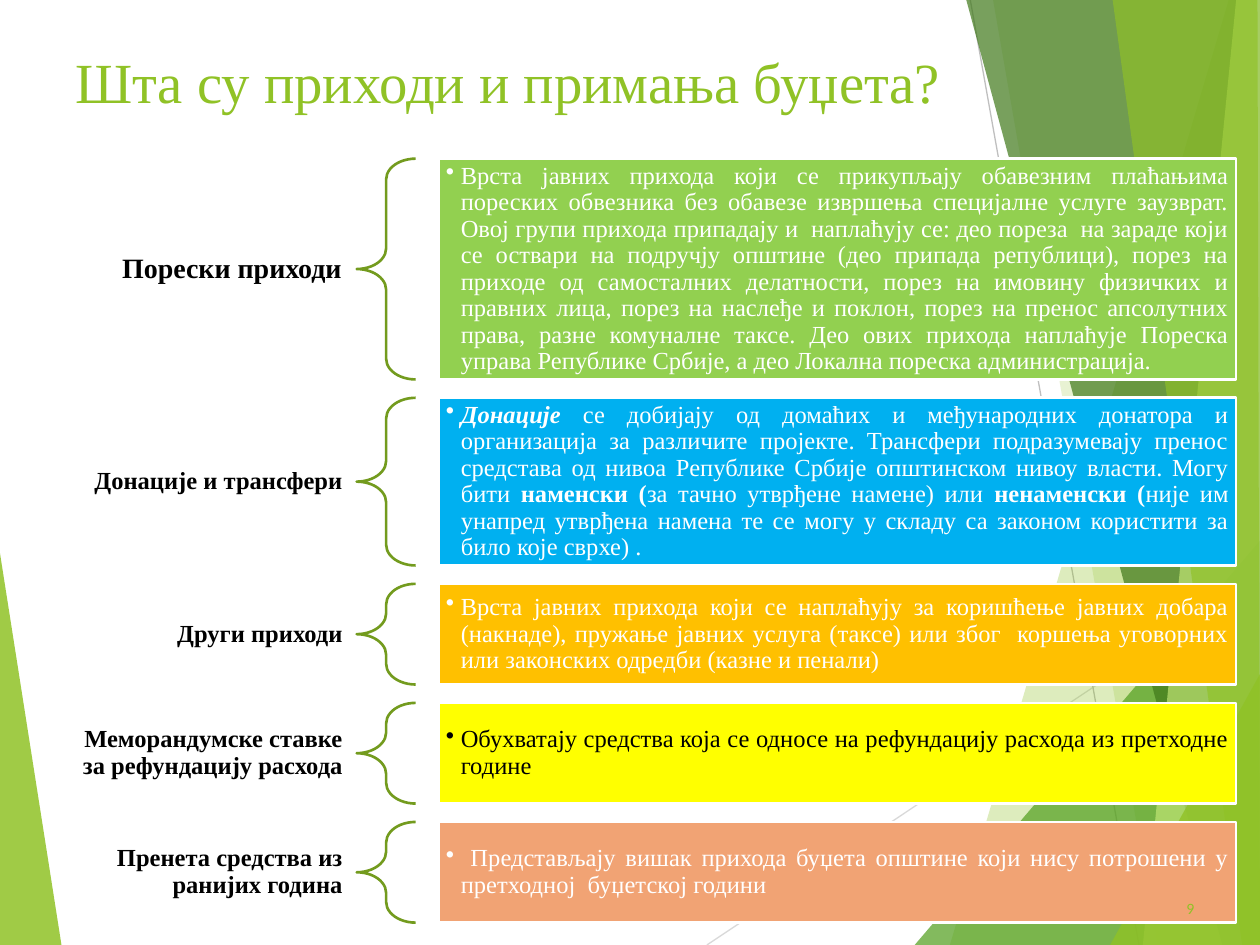
from pptx import Presentation
from pptx.dml.color import RGBColor
from pptx.enum.shapes import MSO_CONNECTOR, MSO_SHAPE
from pptx.enum.text import MSO_ANCHOR, MSO_AUTO_SIZE, PP_ALIGN
from pptx.oxml.ns import qn
from pptx.util import Cm, Pt
from lxml.etree import SubElement

WHITE = RGBColor(255, 255, 255)
BLACK = RGBColor(0, 0, 0)
LIME = RGBColor(0x90, 0xC2, 0x26)
GREEN = RGBColor(0x54, 0xA0, 0x21)
DARK = RGBColor(0x3F, 0x78, 0x19)
PALE = RGBColor(0xC0, 0xE4, 0x74)
OLIVE = RGBColor(0x73, 0x9B, 0x1E)
LEAF = RGBColor(0x92, 0xD0, 0x50)
BLUE = RGBColor(0x00, 0xB0, 0xF0)
GOLD = RGBColor(0xFF, 0xC0, 0x00)
YELLOW = RGBColor(0xFF, 0xFF, 0x00)
PEACH = RGBColor(0xF1, 0xA3, 0x74)
SILVER = RGBColor(0xD9, 0xD9, 0xD9)
GRAY = RGBColor(0xBF, 0xBF, 0xBF)
FONT = "Times New Roman"

TITLE = "Шта су приходи и примања буџета?"
ROWS = [
    ("Порески приходи", 16, 4.45, LEAF, WHITE, [
        ("Врста јавних прихода који се прикупљају обавезним плаћањима пореских "
         "обвезника без обавезе извршења специјалне услуге заузврат. Овој групи "
         "прихода припадају и  наплаћују се: део пореза  на зараде који се оствари "
         "на подручју општине (део припада републици), порез на приходе од "
         "самосталних делатности, порез на имовину физичких и правних лица, порез "
         "на наслеђе и поклон, порез на пренос апсолутних права, разне комуналне "
         "таксе. Део ових прихода наплаћује Пореска управа Републике Србије, а део "
         "Локална пореска администрација.", "")]),
    ("Донације и трансфери", 14, 3.38, BLUE, WHITE, [
        ("Донације ", "bi"),
        ("се добијају од домаћих и међународних донатора и организација за "
         "различите пројекте. Трансфери подразумевају пренос средстава од нивоа "
         "Републике Србије општинском нивоу власти. Могу бити ", ""),
        ("наменски (", "b"),
        ("за тачно утврђене намене) или ", ""),
        ("ненаменски (", "b"),
        ("није им унапред утврђена намена те се могу у складу са законом "
         "користити за било које сврхе) .", "")]),
    ("Други приходи", 14, 2.03, GOLD, WHITE, [
        ("Врста јавних прихода који се наплаћују за коришћење јавних добара "
         "(накнаде), пружање јавних услуга (таксе) или због  коршења уговорних "
         "или законских одредби (казне и пенали)", "")]),
    ("Меморандумске ставке за рефундацију расхода", 14, 2.03, YELLOW, BLACK, [
        ("Обухватају средства која се односе на рефундацију расхода из "
         "претходне године", "")]),
    ("Пренета средства из ранијих година", 14, 2.03, PEACH, WHITE, [
        (" Представљају вишак прихода буџета општине који нису потрошени у "
         "претходној  буџетској години", "")]),
]
RIGHT, BASE = 25.4, 19.05
LEFT = (LIME, 85, [(0, 11.15), (1.24, BASE), (0, BASE)])
LINES = [(14.25, BASE, RIGHT, 11.61, SILVER), (19.56, 0, 22.96, BASE, GRAY)]
FACETS = [
    (LIME, 30, [(24.77, 0), (19.15, BASE), (RIGHT, BASE), (RIGHT, 0)]),
    (LIME, 20, [(20.02, 0), (23.34, BASE), (RIGHT, BASE), (RIGHT, 0)]),
    (GREEN, 72, [(18.44, BASE), (RIGHT, 10.9), (RIGHT, BASE)]),
    (DARK, 70, [(19.48, 0), (24.64, BASE), (RIGHT, BASE), (RIGHT, 0)]),
    (PALE, 70, [(24.92, 0), (23.04, BASE), (RIGHT, BASE), (RIGHT, 0)]),
    (LIME, 65, [(22.43, 0), (25.04, BASE), (RIGHT, BASE), (25.35, 0)]),
    (LIME, 80, [(22.38, BASE), (RIGHT, 13.59), (RIGHT, BASE)]),
]
TOP, GAP = 3.2, 0.37
NAME_X, NAME_W = 1.27, 5.92
BRACE_X, BRACE_W = 7.19, 1.19
BOX_X, BOX_W = 8.84, 16.08


def put(obj, **vals):
    for key, val in vals.items():
        setattr(obj, key, val)


def frame(shape, side, edge):
    text = shape.text_frame
    put(text, word_wrap=True, auto_size=MSO_AUTO_SIZE.NONE,
        vertical_anchor=MSO_ANCHOR.MIDDLE,
        margin_left=Cm(side), margin_right=Cm(side),
        margin_top=Cm(edge), margin_bottom=Cm(edge))
    return text.paragraphs[0]


def write(para, text, color, **vals):
    run = para.add_run()
    run.text = text
    put(run.font, **vals)
    run.font.color.rgb = color


def facet(shapes, color, alpha, spots):
    pts = [(Cm(x), Cm(y)) for x, y in spots]
    form = shapes.build_freeform(*pts[0])
    form.add_line_segments(pts[1:], close=True)
    shape = form.convert_to_shape()
    shape.shadow.inherit = False
    shape.line.fill.background()
    shape.fill.solid()
    shape.fill.fore_color.rgb = color
    tint = next(shape._element.spPr.iter(qn("a:srgbClr")))
    SubElement(tint, qn("a:alpha"), val=str(alpha * 1000))


def rule(shapes, x1, y1, x2, y2, color):
    line = shapes.add_connector(
        MSO_CONNECTOR.STRAIGHT, Cm(x1), Cm(y1), Cm(x2), Cm(y2))
    line.line.color.rgb = color
    line.line.width = Pt(0.75)
    SubElement(line._element.spPr, qn("a:effectLst"))


def label(shapes, text, size, mid):
    high = 2.03
    box = shapes.add_textbox(
        Cm(NAME_X), Cm(mid - high / 2), Cm(NAME_W), Cm(high))
    para = frame(box, 0.3 if size > 14 else 0.28, 0.1)
    put(para, alignment=PP_ALIGN.RIGHT, line_spacing=0.9)
    write(para, text, BLACK, name=FONT, size=Pt(size), bold=True)


def brace(shapes, top, high):
    shape = shapes.add_shape(
        MSO_SHAPE.LEFT_BRACE, Cm(BRACE_X), Cm(top), Cm(BRACE_W), Cm(high))
    shape.shadow.inherit = False
    shape.adjustments[0] = 0.35
    shape.adjustments[1] = 0.5
    shape.fill.background()
    shape.line.color.rgb = OLIVE
    shape.line.width = Pt(1.5)


def panel(shapes, top, high, fill, ink, parts):
    shape = shapes.add_shape(
        MSO_SHAPE.RECTANGLE, Cm(BOX_X), Cm(top), Cm(BOX_W), Cm(high))
    shape.shadow.inherit = False
    shape.fill.solid()
    shape.fill.fore_color.rgb = fill
    shape.line.color.rgb = WHITE
    shape.line.width = Pt(1.5)
    para = frame(shape, 0.15, 0.15)
    put(para, alignment=PP_ALIGN.JUSTIFY, line_spacing=0.9, level=1)
    props = para._p.get_or_add_pPr()
    props.set("marL", str(Cm(0.3)))
    props.set("indent", str(-Cm(0.3)))
    SubElement(props, qn("a:buChar"), char="•")
    for text, style in parts:
        write(para, text, ink, name=FONT, size=Pt(14),
              bold="b" in style, italic="i" in style)


def main():
    deck = Presentation()
    put(deck, slide_width=Cm(RIGHT), slide_height=Cm(BASE))
    slide = deck.slides.add_slide(deck.slide_layouts[5])
    shapes = slide.shapes

    facet(shapes, *LEFT)
    for item in LINES:
        rule(shapes, *item)
    for item in FACETS:
        facet(shapes, *item)

    title = shapes.title
    put(title, left=Cm(1.27), top=Cm(0.76), width=Cm(22.86), height=Cm(1.73))
    para = frame(title, 0.25, 0.13)
    para.alignment = PP_ALIGN.LEFT
    write(para, TITLE, LIME, name=FONT, size=Pt(32.4))
    shapes._spTree.append(title._element)

    top = TOP
    for name, size, high, fill, ink, parts in ROWS:
        label(shapes, name, size, top + high / 2)
        brace(shapes, top, high)
        panel(shapes, top, high, fill, ink, parts)
        top += high + GAP

    page = shapes.add_textbox(Cm(22.6), Cm(17.8), Cm(1.73), Cm(1))
    para = frame(page, 0.25, 0.13)
    para.alignment = PP_ALIGN.RIGHT
    write(para, "9", LIME, size=Pt(9))

    deck.save("out.pptx")


if __name__ == "__main__":
    main()
